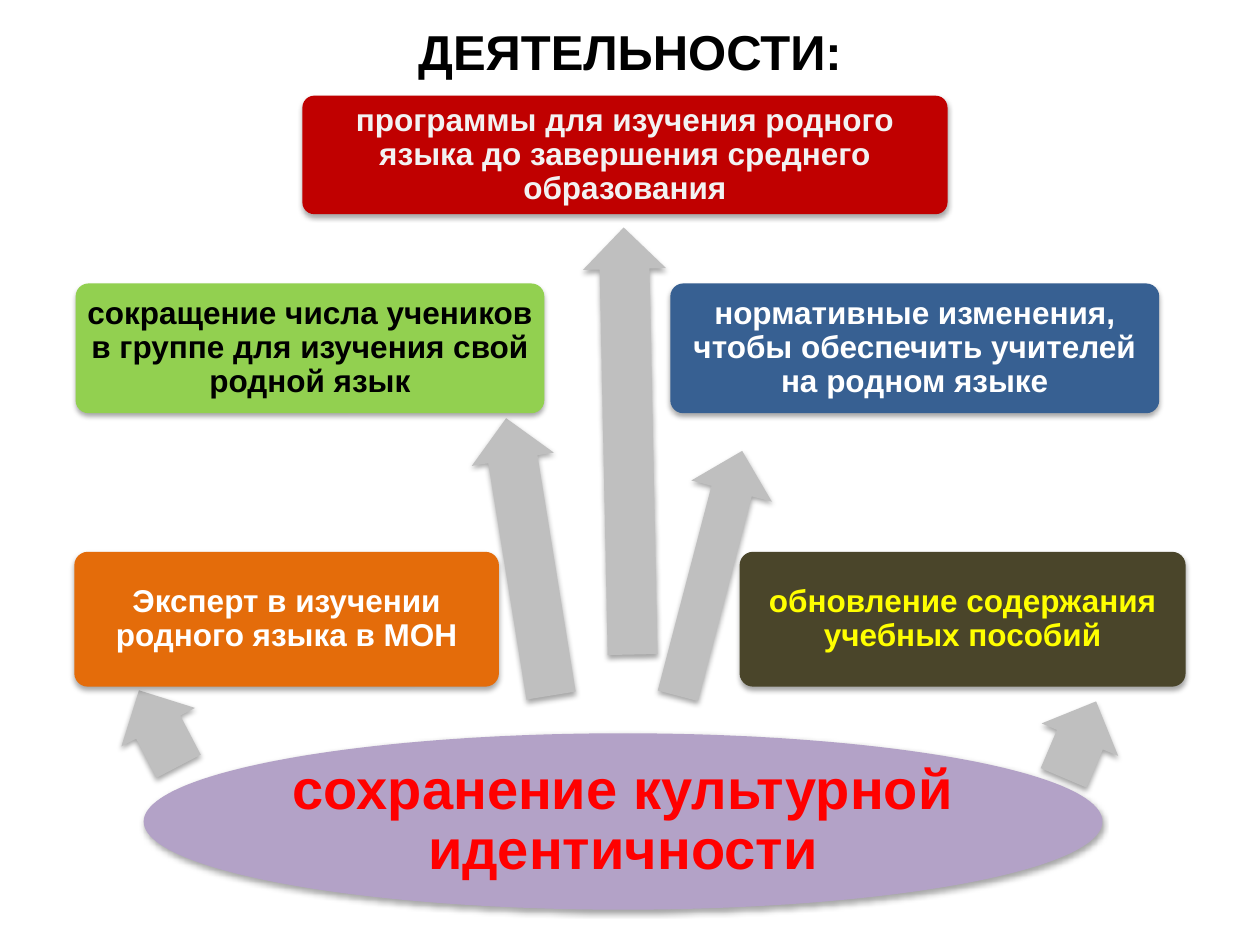
import dataclasses

import lxml.etree
import pptx
import pptx.dml.color
import pptx.enum.shapes
import pptx.enum.text
import pptx.oxml.ns
import pptx.util

Inches = pptx.util.Inches
Kind = pptx.enum.shapes.MSO_SHAPE


@dataclasses.dataclass(frozen=True)
class Theme:
    """Colours and type sizes of the slide."""
    font: str = "Arial"
    head: int = 28
    goal: int = 32
    card: int = 18
    black: str = "000000"
    white: str = "FFFFFF"
    pale: str = "F2F2F2"
    yellow: str = "FFFF00"
    red: str = "FF0000"
    crimson: str = "C00000"
    green: str = "92D050"
    blue: str = "376092"
    orange: str = "E46C0A"
    olive: str = "4A452A"
    violet: str = "B3A2C7"
    gray: str = "BFBFBF"


THEME = Theme()


def paint(color):
    """Turn a hex string into a colour."""
    return pptx.dml.color.RGBColor.from_string(color)


def shade(shape):
    """Give a shape a soft shadow below it."""
    shape.shadow.inherit = False
    effects = shape._element.spPr.find(pptx.oxml.ns.qn("a:effectLst"))
    outer = lxml.etree.SubElement(
        effects, pptx.oxml.ns.qn("a:outerShdw"), blurRad="40000",
        dist="23000", dir="5400000", rotWithShape="0")
    color = lxml.etree.SubElement(
        outer, pptx.oxml.ns.qn("a:srgbClr"), val=THEME.black)
    lxml.etree.SubElement(color, pptx.oxml.ns.qn("a:alpha"), val="35000")


def block(slide, kind, box, fill):
    """Draw a filled, shadowed shape in the box."""
    shape = slide.shapes.add_shape(kind, *map(Inches, box))
    shape.fill.solid()
    shape.fill.fore_color.rgb = paint(fill)
    shape.line.fill.background()
    shade(shape)
    return shape


def write(shape, text, size, color, inset, lead):
    """Set bold centred text in a shape."""
    frame = shape.text_frame
    frame.word_wrap = True
    frame.vertical_anchor = pptx.enum.text.MSO_ANCHOR.MIDDLE
    frame.margin_left = frame.margin_right = Inches(inset)
    frame.margin_top = frame.margin_bottom = Inches(inset)
    line = frame.paragraphs[0]
    line.text = text
    line.alignment = pptx.enum.text.PP_ALIGN.CENTER
    line.line_spacing = lead
    line.font.name = THEME.font
    line.font.size = pptx.util.Pt(size)
    line.font.bold = True
    line.font.color.rgb = paint(color)


def title(slide, box, text):
    """Place the heading in the box."""
    shape = slide.shapes.add_textbox(*map(Inches, box))
    write(shape, text, THEME.head, THEME.black, 0, 1)


def goal(slide, box, text):
    """Place the central goal as an ellipse in the box."""
    shape = block(slide, Kind.OVAL, box, THEME.violet)
    write(shape, text, THEME.goal, THEME.red, 0.02, 0.9)


def card(slide, box, text, fill, color):
    """Place one activity as a rounded card in the box."""
    shape = block(slide, Kind.ROUNDED_RECTANGLE, box, fill)
    shape.adjustments[0] = 0.1
    write(shape, text, THEME.card, color, 0.04, 0.9)


def arrow(slide, box, turn, shaft):
    """Place a left arrow in the box and turn it clockwise."""
    shape = block(slide, Kind.LEFT_ARROW, box, THEME.gray)
    shape.adjustments[0] = shaft
    shape.adjustments[1] = 0.5
    shape.rotation = turn


def main():
    """Build and save the slide."""
    deck = pptx.Presentation()
    deck.slide_width, deck.slide_height = Inches(10), Inches(7.5)
    slide = deck.slides.add_slide(deck.slide_layouts[6])
    title(slide, (0.5, 0.21, 9, 0.39), "ДЕЯТЕЛЬНОСТИ:")
    goal(slide, (1.14, 5.82, 7.61, 1.4), "сохранение культурной идентичности")
    high, mid, low = (0.76, 0.94), (2.25, 1.03), (4.38, 1.07)
    thick = 0.66
    steps = [
        ((0.92, 5.45, 0.68), 62.4, 0.6, (0.59, 3.37), low,
         "Эксперт в изучении родного языка в МОН",
         THEME.orange, THEME.white),
        ((3.08, 4.09, 2.23), 80.8, 0.6, (0.6, 3.72), mid,
         "сокращение числа учеников в группе для изучения свой родной язык",
         THEME.green, THEME.black),
        ((3.29, 3.17, 3.39), 88.8, 0.6, (2.4, 5.12), high,
         "программы для изучения родного языка до завершения среднего "
         "образования", THEME.crimson, THEME.pale),
        ((4.63, 4.22, 2.01), 104.7, 0.5, (5.32, 3.88), mid,
         "нормативные изменения, чтобы обеспечить учителей на родном языке",
         THEME.blue, THEME.white),
        ((8.24, 5.54, 0.66), 113, 0.6, (5.87, 3.54), low,
         "обновление содержания учебных пособий",
         THEME.olive, THEME.yellow),
    ]
    for place, turn, shaft, (left, width), (top, tall), text, fill, ink in steps:
        arrow(slide, (*place, thick), turn, shaft)
        card(slide, (left, top, width, tall), text, fill, ink)
    deck.save("out.pptx")


if __name__ == "__main__":
    main()
